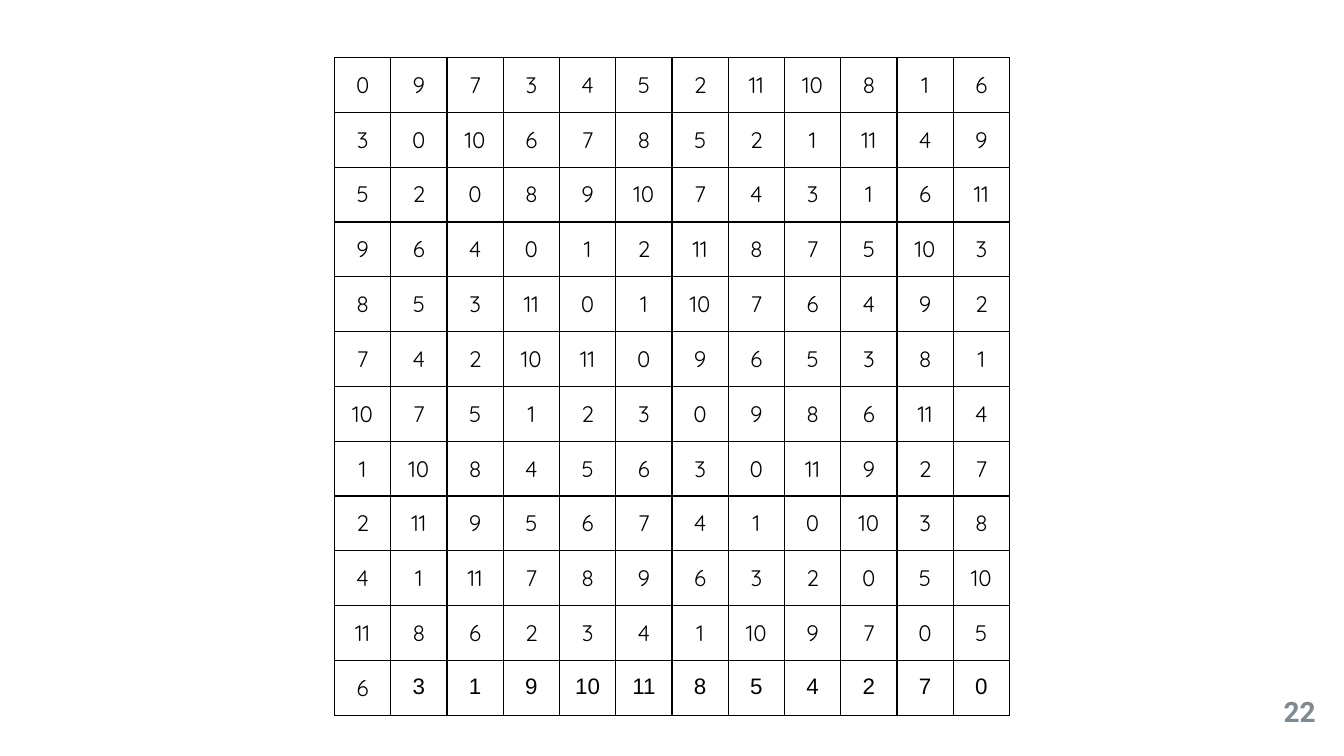
from lxml import etree
from pptx import Presentation
from pptx.dml.color import RGBColor
from pptx.enum import text
from pptx.oxml import ns
from pptx.util import Pt

BLACK = RGBColor(0x00, 0x00, 0x00)
GRAY = RGBColor(0x7F, 0x8B, 0x91)

TONE_ROW = [0, 9, 7, 3, 4, 5, 2, 11, 10, 8, 1, 6]
PAGE_NUMBER = "22"

# Each row of the matrix is the tone row transposed to put 0 on the diagonal.
MATRIX = [[(tone - start) % 12 for tone in TONE_ROW] for start in TONE_ROW]

SIZE = len(TONE_ROW)
TABLE_LEFT, TABLE_TOP = 179.2, 30.8
COLUMN_WIDTH, ROW_HEIGHT = 30.15, 29.38
CELL_MARGIN = 7.2
BORDER_WIDTH = 0.75


def style_run(paragraph, font_name, size, color, bold=False):
    font = paragraph.runs[0].font
    font.name = font_name
    font.size = Pt(size)
    font.bold = bold
    font.color.rgb = color


def add_borders(cell):
    properties = cell._tc.get_or_add_tcPr()
    for position, side in enumerate(("lnL", "lnR", "lnT", "lnB")):
        line = etree.Element(ns.qn(f"a:{side}"), w=str(Pt(BORDER_WIDTH)))
        fill = etree.SubElement(line, ns.qn("a:solidFill"))
        etree.SubElement(fill, ns.qn("a:srgbClr"), val=str(BLACK))
        properties.insert(position, line)


def fill_cell(cell, value, font_name):
    cell.fill.background()
    cell.margin_left = cell.margin_right = Pt(CELL_MARGIN)
    cell.margin_top = cell.margin_bottom = Pt(CELL_MARGIN)
    cell.text_frame.text = str(value)
    paragraph = cell.text_frame.paragraphs[0]
    paragraph.alignment = text.PP_ALIGN.CENTER
    style_run(paragraph, font_name, 12, BLACK)
    add_borders(cell)


def add_matrix(slide):
    table = slide.shapes.add_table(
        SIZE, SIZE, Pt(TABLE_LEFT), Pt(TABLE_TOP),
        Pt(SIZE * COLUMN_WIDTH), Pt(SIZE * ROW_HEIGHT)).table
    table.first_row = table.horz_banding = False
    for column in table.columns:
        column.width = Pt(COLUMN_WIDTH)
    for row in table.rows:
        row.height = Pt(ROW_HEIGHT)
    for i, values in enumerate(MATRIX):
        for j, value in enumerate(values):
            in_arial = i == SIZE - 1 and j > 0
            fill_cell(table.cell(i, j), value, "Arial" if in_arial else "Quicksand")


def add_page_number(slide):
    box = slide.shapes.add_textbox(Pt(661.7), Pt(369.4), Pt(43.2), Pt(23.8))
    frame = box.text_frame
    frame.word_wrap = True
    frame.margin_left = frame.margin_right = 0
    frame.margin_top = frame.margin_bottom = 0
    frame.vertical_anchor = text.MSO_ANCHOR.MIDDLE
    frame.text = PAGE_NUMBER
    paragraph = frame.paragraphs[0]
    paragraph.alignment = text.PP_ALIGN.RIGHT
    style_run(paragraph, "Roboto", 15, GRAY, bold=True)


def main():
    presentation = Presentation()
    presentation.slide_width, presentation.slide_height = Pt(720), Pt(405)
    slide = presentation.slides.add_slide(presentation.slide_layouts[6])
    add_page_number(slide)
    add_matrix(slide)
    presentation.save("out.pptx")


if __name__ == "__main__":
    main()
